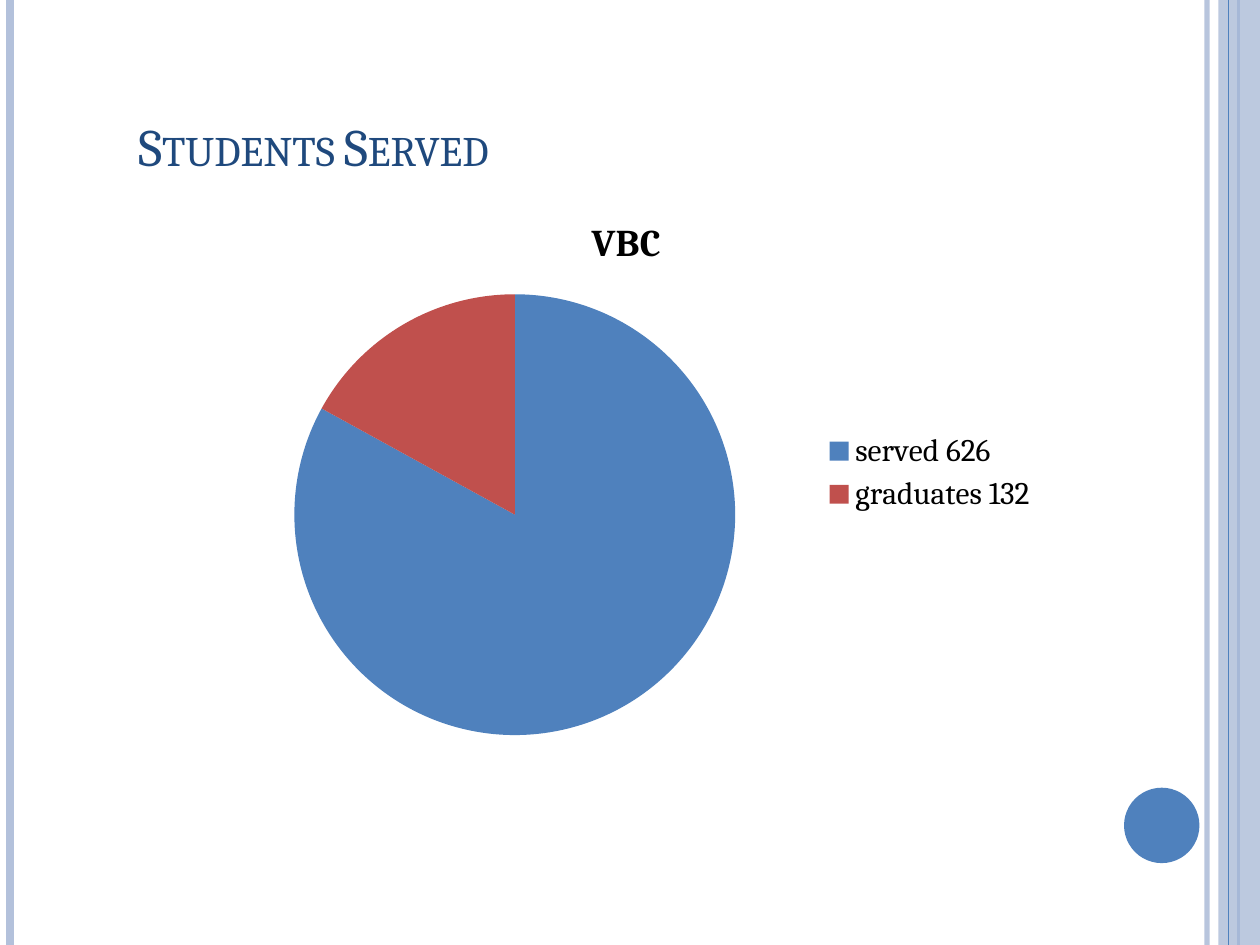
from dataclasses import dataclass

import lxml.etree
import pptx
import pptx.chart.data
import pptx.dml.color
import pptx.enum.chart
import pptx.enum.shapes
import pptx.enum.text
import pptx.oxml.ns
import pptx.util

Cm = pptx.util.Cm
Pt = pptx.util.Pt
qn = pptx.oxml.ns.qn

FONT = "Cambria"
PALE, BLUE, RED, NAVY, BLACK = "B3C1DB", "4F81BD", "C0504D", "1F497D", "000000"
WIDTH, HEIGHT = 25.4, 19.05


@dataclass
class Stripe:
    x: float
    color: str
    weight: float
    opacity: int = 100


@dataclass
class Block:
    kind: pptx.enum.shapes.MSO_SHAPE
    left: float
    top: float
    width: float
    height: float
    color: str
    opacity: int = 100


DECORATION = [
    Stripe(24.33, PALE, 3, 93),
    Stripe(0.2, PALE, 4.5),
    Stripe(24.97, BLUE, 1.5),
    Block(pptx.enum.shapes.MSO_SHAPE.RECTANGLE, 24.56, 0, WIDTH - 24.56, HEIGHT, PALE, 87),
    Stripe(24.77, BLUE, 0.75),
    Block(pptx.enum.shapes.MSO_SHAPE.OVAL, 22.66, 15.88, 1.52, 1.52, BLUE),
]


def paint(fill, color: str, opacity: int = 100) -> None:
    fill.solid()
    fill.fore_color.rgb = pptx.dml.color.RGBColor.from_string(color)
    if opacity < 100:
        color_element = fill._xPr.find(f"{qn('a:solidFill')}/{qn('a:srgbClr')}")
        alpha = lxml.etree.SubElement(color_element, qn("a:alpha"))
        alpha.set("val", str(opacity * 1000))


def style_font(font, size: float, color: str, bold: bool = False) -> None:
    font.name = FONT
    font.size = Pt(size)
    font.bold = bold
    paint(font.fill, color)


def draw_stripe(slide, stripe: Stripe) -> None:
    connector = slide.shapes.add_connector(
        pptx.enum.shapes.MSO_CONNECTOR.STRAIGHT,
        Cm(stripe.x), Cm(0), Cm(stripe.x), Cm(HEIGHT),
    )
    connector.line.width = Pt(stripe.weight)
    paint(connector.line.fill, stripe.color, stripe.opacity)
    lxml.etree.SubElement(connector._element.spPr, qn("a:effectLst"))


def draw_block(slide, block: Block) -> None:
    shape = slide.shapes.add_shape(
        block.kind, Cm(block.left), Cm(block.top), Cm(block.width), Cm(block.height)
    )
    shape.shadow.inherit = False
    shape.line.fill.background()
    paint(shape.fill, block.color, block.opacity)


def write_text(text_frame, text: str, *, size: float, color: str,
               bold: bool = False, small_caps: bool = False) -> None:
    run = text_frame.paragraphs[0].add_run()
    run.text = text
    style_font(run.font, size, color, bold)
    if small_caps:
        run._r.get_or_add_rPr().set("cap", "small")


def add_title(slide, text: str) -> None:
    text_frame = slide.shapes.add_textbox(Cm(2.54), Cm(1.9), Cm(19.5), Cm(1.8)).text_frame
    text_frame.word_wrap = True
    text_frame.vertical_anchor = pptx.enum.text.MSO_ANCHOR.BOTTOM
    write_text(text_frame, text, size=30, color=NAVY, small_caps=True)


def add_pie(slide, name: str, slices: list[tuple[str, int, str]]) -> None:
    data = pptx.chart.data.CategoryChartData()
    data.categories = [label for label, _, _ in slices]
    data.add_series(name, [value for _, value, _ in slices])
    chart = slide.shapes.add_chart(
        pptx.enum.chart.XL_CHART_TYPE.PIE,
        Cm(4.24), Cm(3.89), Cm(16.94), Cm(11.28), data,
    ).chart
    style_font(chart.font, 18, BLACK)
    chart.has_title = True
    write_text(chart.chart_title.text_frame, name, size=21.6, color=BLACK, bold=True)
    chart.chart_title.include_in_layout = False
    chart.has_legend = True
    chart.legend.position = pptx.enum.chart.XL_LEGEND_POSITION.RIGHT
    chart.legend.include_in_layout = False
    style_font(chart.legend.font, 18, BLACK)
    plot = chart.plots[0]
    plot.vary_by_categories = True
    for index, (_, _, color) in enumerate(slices):
        paint(plot.series[0].points[index].format.fill, color)


def main() -> None:
    presentation = pptx.Presentation()
    presentation.slide_width = Cm(WIDTH)
    presentation.slide_height = Cm(HEIGHT)
    slide = presentation.slides.add_slide(presentation.slide_layouts[6])
    paint(slide.background.fill, "FFFFFF")
    for item in DECORATION:
        if isinstance(item, Stripe):
            draw_stripe(slide, item)
        else:
            draw_block(slide, item)
    add_title(slide, "Students Served")
    add_pie(slide, "VBC ", [("served 626", 83, BLUE), ("graduates 132", 17, RED)])
    presentation.save("out.pptx")


if __name__ == "__main__":
    main()
